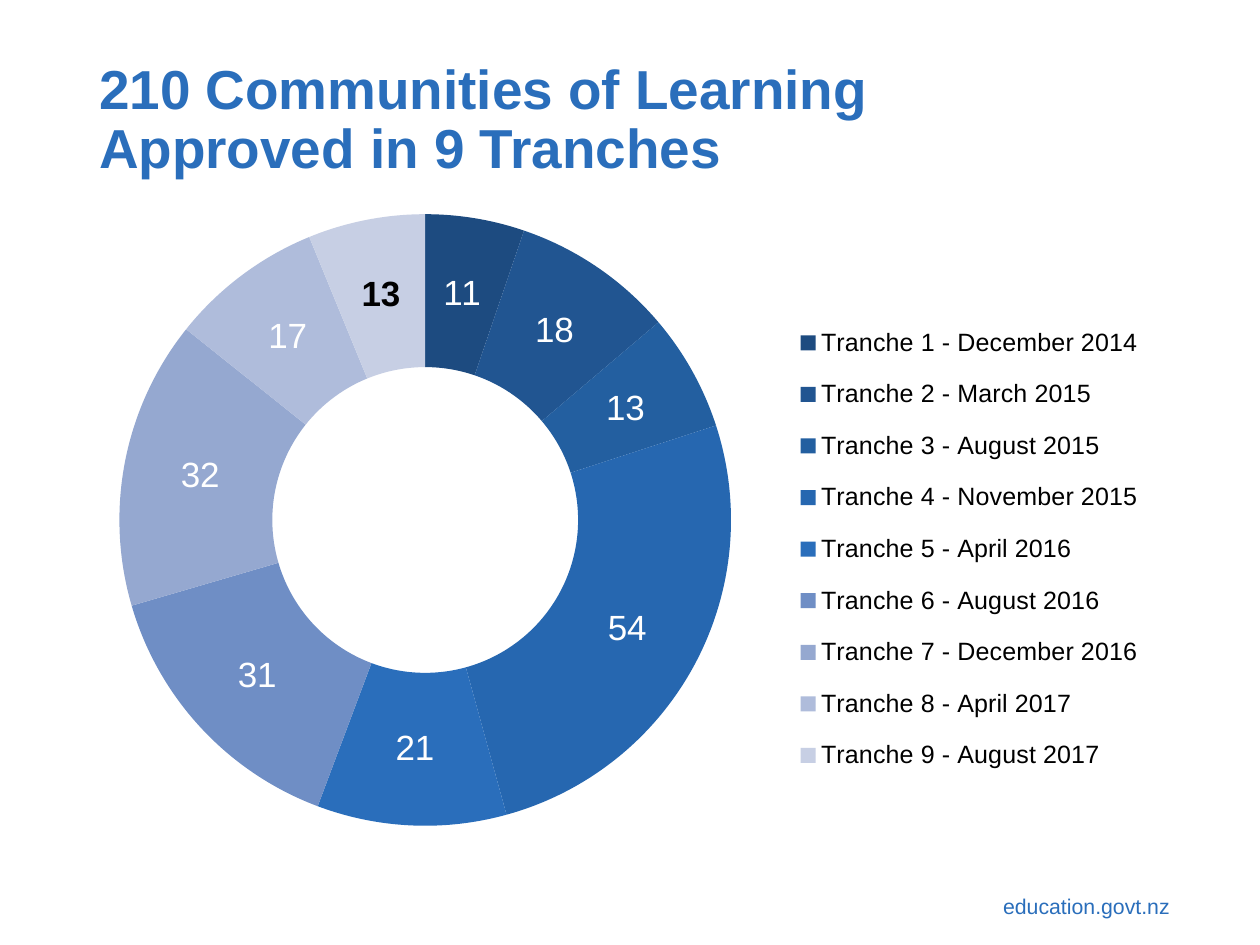
from lxml import etree
from pptx import Presentation
from pptx.chart.data import CategoryChartData
from pptx.dml.color import RGBColor
from pptx.enum.chart import XL_CHART_TYPE, XL_LEGEND_POSITION
from pptx.enum.text import MSO_ANCHOR, PP_ALIGN
from pptx.oxml.ns import qn
from pptx.util import Inches, Pt

DOUGHNUT = XL_CHART_TYPE.DOUGHNUT
LEGEND_RIGHT = XL_LEGEND_POSITION.RIGHT
TOP, MIDDLE = MSO_ANCHOR.TOP, MSO_ANCHOR.MIDDLE
LEFT, RIGHT = PP_ALIGN.LEFT, PP_ALIGN.RIGHT

FONT = "Arial"
BLUE, WHITE, BLACK = "2A6EBB", "FFFFFF", "000000"
# Tranche, communities approved, segment colour
TRANCHES = [
    ("Tranche 1 - December 2014", 11, "1D4B80"),
    ("Tranche 2 - March 2015", 18, "215591"),
    ("Tranche 3 - August 2015", 13, "235FA0"),
    ("Tranche 4 - November 2015", 54, "2667B0"),
    ("Tranche 5 - April 2016", 21, BLUE),
    ("Tranche 6 - August 2016", 31, "6F8EC5"),
    ("Tranche 7 - December 2016", 32, "95A8D0"),
    ("Tranche 8 - April 2017", 17, "AFBCDB"),
    ("Tranche 9 - August 2017", 13, "C7CFE4"),
]


def rgb(value):
    return RGBColor.from_string(value)


def set_font(font, size, color, bold=False):
    font.name = FONT
    font.size = Pt(size)
    font.bold = bold
    font.color.rgb = rgb(color)


def add_text(slide, text, x, y, w, h, size, color=BLUE, bold=False,
             align=LEFT, anchor=TOP, spacing=1.0):
    box = slide.shapes.add_textbox(Inches(x), Inches(y), Inches(w), Inches(h))
    tf = box.text_frame
    tf.word_wrap = True
    tf.vertical_anchor = anchor
    tf.margin_left = tf.margin_right = Inches(0.14)
    tf.margin_top = tf.margin_bottom = Inches(0.07)
    tf.text = text
    for p in tf.paragraphs:
        p.alignment = align
        p.line_spacing = spacing
        for r in p.runs:
            set_font(r.font, size, color, bold)


def set_layout(parent, before, x, y, w, h, inner=False):
    """Place a chart part by fractions of the chart's size."""
    for old in parent.findall(qn("c:layout")):
        parent.remove(old)
    layout = etree.Element(qn("c:layout"))
    manual = etree.SubElement(layout, qn("c:manualLayout"))
    values = [("layoutTarget", "inner")] if inner else []
    values += [("xMode", "edge"), ("yMode", "edge"),
               ("x", x), ("y", y), ("w", w), ("h", h)]
    for tag, value in values:
        etree.SubElement(manual, qn(f"c:{tag}")).set("val", str(value))
    parent.find(qn(before)).addprevious(layout)


def add_doughnut(slide, x, y, w, h):
    data = CategoryChartData()
    data.categories = [name for name, _, _ in TRANCHES]
    data.add_series("Series 1", [count for _, count, _ in TRANCHES])
    chart = slide.shapes.add_chart(
        DOUGHNUT, Inches(x), Inches(y), Inches(w), Inches(h), data).chart
    chart.has_title = False
    set_font(chart.font, 20, BLACK)

    # Segments
    plot = chart.plots[0]
    plot.vary_by_categories = True
    series = plot.series[0]
    for i, (_, _, color) in enumerate(TRANCHES):
        fmt = series.points[i].format
        fmt.fill.solid()
        fmt.fill.fore_color.rgb = rgb(color)
        fmt.line.fill.background()
    plot._element.find(qn("c:holeSize")).set("val", "68")

    # Value labels, the newest tranche picked out in bold black
    labels = series.data_labels
    labels.show_value = True
    labels.show_percentage = False
    set_font(labels.font, 28, WHITE)
    newest = series.points[len(TRANCHES) - 1].data_label
    set_font(newest.font, 28, BLACK, bold=True)

    # Legend and plot positions
    chart.has_legend = True
    legend = chart.legend
    legend.position = LEGEND_RIGHT
    legend.include_in_layout = False
    set_font(legend.font, 20, BLACK)
    set_layout(legend._element, "c:overlay", 0.64, 0.14, 0.34, 0.75)
    set_layout(plot._element.getparent(), "c:doughnutChart",
               0.005, 0, 0.59, 0.94, inner=True)


def main():
    prs = Presentation()
    prs.slide_width, prs.slide_height = Inches(14), Inches(10.5)
    slide = prs.slides.add_slide(prs.slide_layouts[6])

    # Footer address
    add_text(slide, "education.govt.nz", 9.96, 9.86, 3.18, 0.42, 17,
             align=RIGHT)
    # Title
    add_text(slide, "210 Communities of Learning\nApproved in 9 Tranches",
             0.96, 0.56, 10.35, 1.58, 43.9, bold=True, anchor=MIDDLE,
             spacing=0.9)
    # Communities per tranche
    add_doughnut(slide, 1.17, 2.38, 11.85, 7.23)

    prs.save("out.pptx")


if __name__ == "__main__":
    main()
